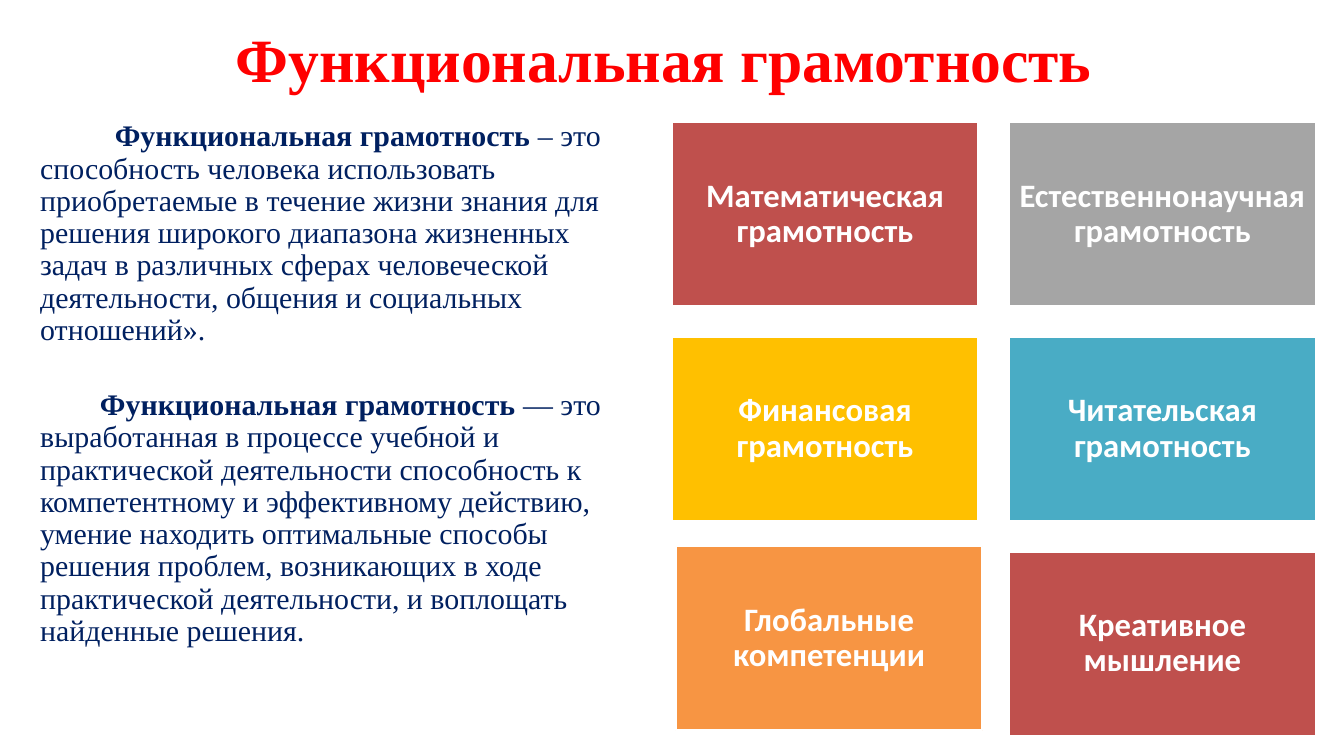
from pptx import Presentation
from pptx.dml.color import RGBColor
from pptx.enum.shapes import MSO_SHAPE
from pptx.enum.text import MSO_ANCHOR, PP_ALIGN
from pptx.util import Cm, Pt

COLORS = {
    "title": "FF0000", "body": "002060", "white": "FFFFFF",
    "red": "BF504D", "gray": "A5A5A5", "yellow": "FFC000",
    "teal": "49ACC5", "orange": "F79543",
}
TITLE = "Функциональная грамотность"
TERM = "Функциональная грамотность"
# first-line indent (cm), space before (pt), meaning of the term
DEFINITIONS = [
    (2.82, 0, " – это способность человека использовать приобретаемые в течение "
     "жизни знания для решения широкого диапазона жизненных задач в различных "
     "сферах человеческой деятельности, общения и социальных отношений»."),
    (2.26, 46, " — это выработанная в процессе учебной и практической деятельности "
     "способность к компетентному и эффективному действию, умение находить "
     "оптимальные способы решения проблем, возникающих в ходе практической "
     "деятельности, и воплощать найденные решения."),
]
# text, colour, shift from the grid (cm)
LITERACIES = [
    ("Математическая грамотность", "red", (0, 0)),
    ("Естественнонаучная грамотность", "gray", (0, 0)),
    ("Финансовая грамотность", "yellow", (0, 0)),
    ("Читательская грамотность", "teal", (0, 0)),
    ("Глобальные компетенции", "orange", (0.15, -0.2)),
    ("Креативное мышление", "red", (0, 0)),
]
COLUMNS = 2
GRID_LEFT, GRID_TOP = 25.4, 4.62
CARD_WIDTH, CARD_HEIGHT = 11.58, 6.95
COLUMN_STEP, ROW_STEP = 12.75, 8.12


def rgb(name):
    return RGBColor.from_string(COLORS[name])


def style(paragraph, font_name, size, color, bold=None):
    paragraph.line_spacing = 0.9
    font = paragraph.font
    font.name, font.size, font.bold = font_name, Pt(size), bold
    font.color.rgb = rgb(color)


def add_text_frame(slide, left, top, width, height):
    frame = slide.shapes.add_textbox(Cm(left), Cm(top), Cm(width), Cm(height)).text_frame
    frame.word_wrap = True
    return frame


def add_title(slide):
    frame = add_text_frame(slide, 1.27, 0.76, 47.63, 3.18)
    frame.vertical_anchor = MSO_ANCHOR.MIDDLE
    heading = frame.paragraphs[0]
    heading.text = TITLE
    heading.alignment = PP_ALIGN.CENTER
    style(heading, "Times New Roman", 66, "title", True)


def add_definitions(slide):
    frame = add_text_frame(slide, 1.27, 4.45, 22.86, 23.16)
    for number, (indent, space_before, meaning) in enumerate(DEFINITIONS):
        definition = frame.add_paragraph() if number else frame.paragraphs[0]
        style(definition, "Times New Roman", 32, "body")
        definition.space_before = Pt(space_before)
        properties = definition._p.get_or_add_pPr()
        properties.set("marL", "0")
        properties.set("indent", str(Cm(indent)))
        for words, bold in ((TERM, True), (meaning, False)):
            run = definition.add_run()
            run.text = words
            run.font.bold = bold


def add_literacies(slide):
    for number, (label, color, (shift_x, shift_y)) in enumerate(LITERACIES):
        row, column = divmod(number, COLUMNS)
        card = slide.shapes.add_shape(
            MSO_SHAPE.RECTANGLE,
            Cm(GRID_LEFT + column * COLUMN_STEP + shift_x),
            Cm(GRID_TOP + row * ROW_STEP + shift_y),
            Cm(CARD_WIDTH), Cm(CARD_HEIGHT))
        card.shadow.inherit = False
        card.fill.solid()
        card.fill.fore_color.rgb = rgb(color)
        card.line.color.rgb = rgb("white")
        card.line.width = Pt(2)
        frame = card.text_frame
        frame.word_wrap = True
        frame.vertical_anchor = MSO_ANCHOR.MIDDLE
        frame.margin_left = frame.margin_right = Cm(0.37)
        frame.margin_top = frame.margin_bottom = Cm(0.37)
        caption = frame.paragraphs[0]
        caption.text = label
        caption.alignment = PP_ALIGN.CENTER
        style(caption, "Calibri", 35, "white", True)


def main():
    deck = Presentation()
    deck.slide_width, deck.slide_height = Cm(50.8), Cm(28.58)
    slide = deck.slides.add_slide(deck.slide_layouts[6])
    add_title(slide)
    add_definitions(slide)
    add_literacies(slide)
    deck.save("out.pptx")


if __name__ == "__main__":
    main()
